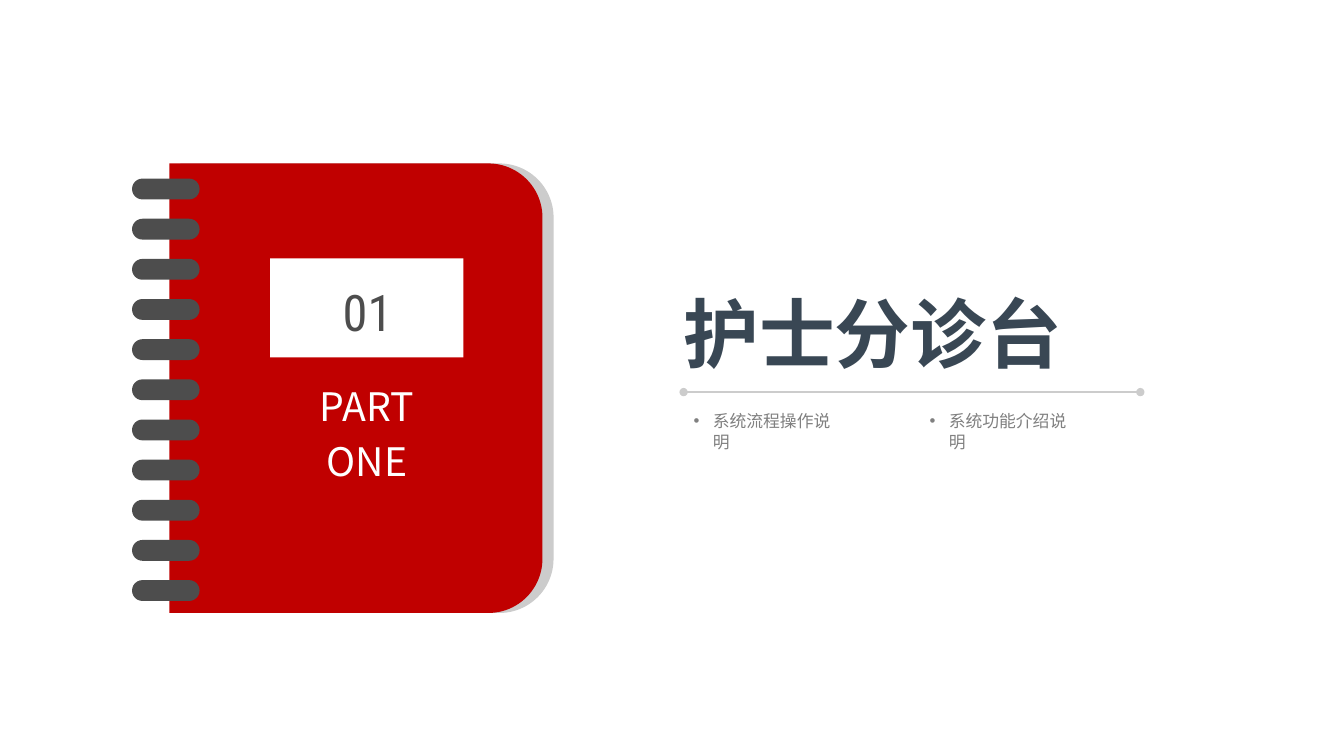
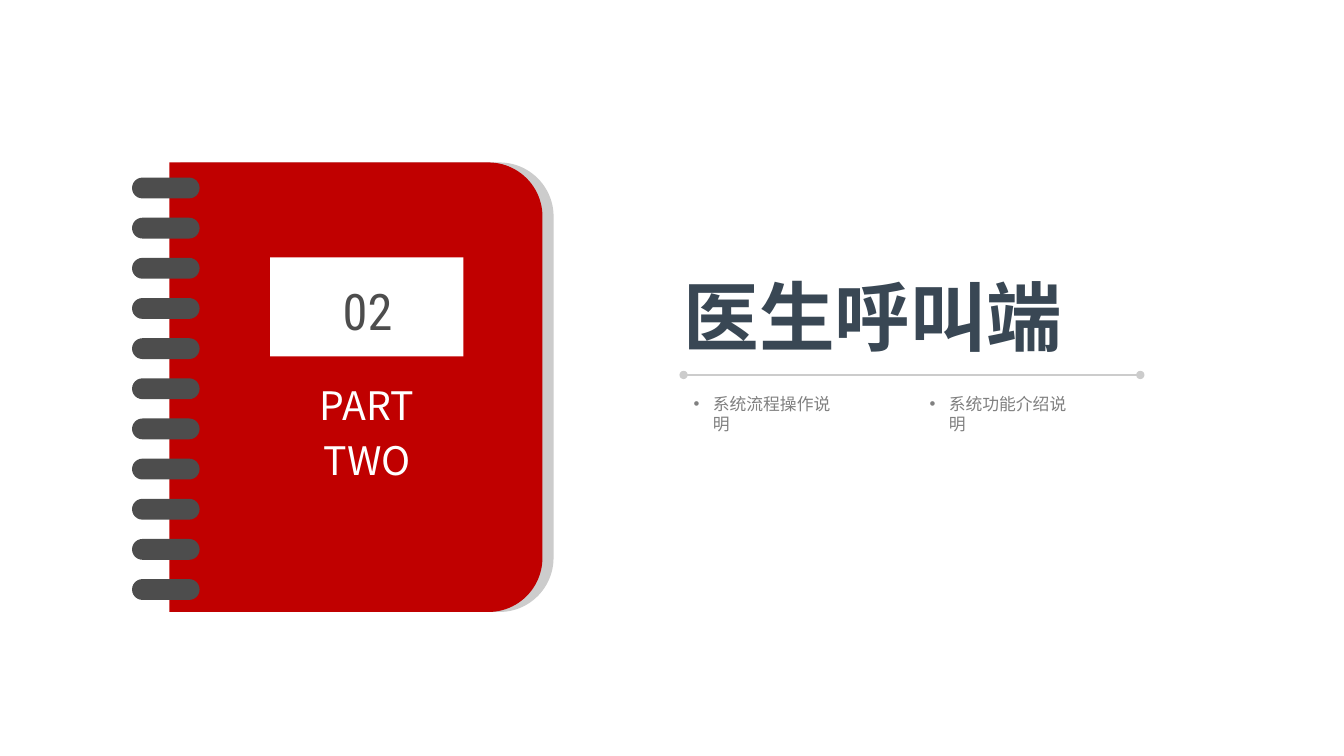
from dataclasses import dataclass

from lxml import etree
from pptx import Presentation
from pptx import util as u
from pptx.dml.color import RGBColor
from pptx.enum import shapes, text
from pptx.oxml import ns

# Shared style
RED, GREY, DARK, WHITE = "C00000", "CCCCCC", "4D4D4D", "FFFFFF"
NAVY, MUTED = "394754", "808080"
CJK_FONT, NUMBER_FONT = "Noto Sans CJK SC", "Roboto Condensed"

# Grid: 160 columns by 90 rows of square cells
SLIDE_WIDTH, SLIDE_HEIGHT = u.Inches(13.33), u.Inches(7.5)
CELL = SLIDE_HEIGHT / 90
TWO_CONTENT_LAYOUT = 3


@dataclass(frozen=True)
class Area:
    col: float
    row: float
    cols: float
    rows: float

    def down(self, rows: float) -> "Area":
        return Area(self.col, self.row + rows, self.cols, self.rows)

    def box(self) -> tuple:
        return tuple(cells(n) for n in (self.col, self.row, self.cols, self.rows))


@dataclass(frozen=True)
class Style:
    size: float
    color: str
    font: str = CJK_FONT
    bold: bool = False
    align: text.PP_ALIGN = text.PP_ALIGN.LEFT


@dataclass(frozen=True)
class Section:
    number: str
    ordinal: str
    heading: str
    topics: tuple
    notebook_row: float
    rule_row: float


# Notebook parts, measured from the notebook's top edge
COVER = Area(20.16, 0, 44.4, 53.52)
COVER_SHADOW = Area(21.48, 0, 44.4, 53.52)
LABEL = Area(32.16, 11.3, 23, 11.8)
NUMBER = Area(32.88, 14, 21.72, 7.3)
ORDINAL = Area(34.56, 26.1, 18.24, 12.5)
RING = Area(15.72, 1.8, 8.04, 2.48)
RING_COUNT, RING_PITCH = 11, 4.78
COVER_CORNER = 0.145

# Heading parts, measured from the rule
RULE_START, RULE_END = 81.36, 135.72
HEADING = Area(RULE_START, -12.5, 58.7, 10.9)
TOPIC = Area(RULE_START, 1.66, 20.64, 3.6)
TOPIC_PITCH = 28.08

NUMBER_STYLE = Style(36, DARK, NUMBER_FONT, align=text.PP_ALIGN.CENTER)
ORDINAL_STYLE = Style(28, WHITE, align=text.PP_ALIGN.CENTER)
HEADING_STYLE = Style(54, NAVY, bold=True)
TOPIC_STYLE = Style(12, MUTED)

TOPICS = ("系统流程操作说明", "系统功能介绍说明")
SECTIONS = (
    Section("01", "PART\nONE", "护士分诊台", TOPICS, 19.46, 46.68),
    Section("02", "PART\nTWO", "医生呼叫端", TOPICS, 19.34, 44.64),
)


def cells(count: float) -> int:
    return round(count * CELL)


def rgb(color: str) -> RGBColor:
    return RGBColor.from_string(color)


def place(shape, area: Area) -> None:
    shape.left, shape.top, shape.width, shape.height = area.box()


def add_block(slide, kind, area: Area, color: str):
    block = slide.shapes.add_shape(kind, *area.box())
    block.shadow.inherit = False
    block.fill.solid()
    block.fill.fore_color.rgb = rgb(color)
    block.line.fill.background()
    return block


def add_cover(slide, area: Area, color: str) -> None:
    """Draw a sheet whose two right corners are round."""
    middle_col, middle_row = area.col + area.cols / 2, area.row + area.rows / 2
    upright = Area(middle_col - area.rows / 2, middle_row - area.cols / 2, area.rows, area.cols)
    cover = add_block(slide, shapes.MSO_SHAPE.ROUND_2_SAME_RECTANGLE, upright, color)
    cover.adjustments[0] = COVER_CORNER
    cover.rotation = 90


def write(shape, words: str, style: Style, inset: bool = False, wrap: bool = True) -> None:
    frame = shape.text_frame
    frame.text = words
    frame.word_wrap = wrap
    frame.auto_size = text.MSO_AUTO_SIZE.SHAPE_TO_FIT_TEXT
    frame.vertical_anchor = text.MSO_ANCHOR.TOP
    if not inset:
        frame.margin_left = frame.margin_right = frame.margin_top = frame.margin_bottom = 0
    for index, paragraph in enumerate(frame.paragraphs):
        paragraph.alignment = style.align
        paragraph.space_before = u.Pt(0.2 * style.size if index else 0)
        for run in paragraph.runs:
            run.font.size, run.font.bold = u.Pt(style.size), style.bold
            run.font.name = style.font
            run.font.color.rgb = rgb(style.color)
            east_asian = etree.SubElement(run.font._element, ns.qn("a:ea"))
            east_asian.set("typeface", style.font)


def add_bullet(paragraph) -> None:
    properties = paragraph._p.get_or_add_pPr()
    indent = u.Inches(0.19)
    properties.set("marL", str(indent))
    properties.set("indent", str(-indent))
    for tag, key, value in (("a:buFont", "typeface", "Arial"), ("a:buChar", "char", "•")):
        etree.SubElement(properties, ns.qn(tag)).set(key, value)


def add_rule(slide, row: float) -> None:
    rule = slide.shapes.add_connector(
        shapes.MSO_CONNECTOR.STRAIGHT,
        cells(RULE_START), cells(row), cells(RULE_END), cells(row))
    rule.line.color.rgb = rgb(GREY)
    rule.line.width = u.Pt(1)
    for end in ("a:headEnd", "a:tailEnd"):
        etree.SubElement(rule.line._get_or_add_ln(), ns.qn(end)).set("type", "oval")
    etree.SubElement(rule._element.spPr, ns.qn("a:effectLst"))


def add_notebook(slide, section: Section) -> None:
    top = section.notebook_row
    add_cover(slide, COVER_SHADOW.down(top), GREY)
    add_cover(slide, COVER.down(top), RED)
    add_block(slide, shapes.MSO_SHAPE.RECTANGLE, LABEL.down(top), WHITE)
    for index in range(RING_COUNT):
        ring_area = RING.down(top + index * RING_PITCH)
        ring = add_block(slide, shapes.MSO_SHAPE.ROUNDED_RECTANGLE, ring_area, DARK)
        ring.adjustments[0] = 0.5
    for area, words, style in ((NUMBER, section.number, NUMBER_STYLE),
                               (ORDINAL, section.ordinal, ORDINAL_STYLE)):
        caption = slide.shapes.add_textbox(*area.down(top).box())
        write(caption, words, style)


def add_heading(slide, section: Section) -> None:
    heading, *topics = slide.placeholders
    place(heading, HEADING.down(section.rule_row))
    write(heading, section.heading, HEADING_STYLE)
    add_rule(slide, section.rule_row)
    for index, (topic, words) in enumerate(zip(topics, section.topics)):
        area = Area(TOPIC.col + index * TOPIC_PITCH, TOPIC.row, TOPIC.cols, TOPIC.rows)
        place(topic, area.down(section.rule_row))
        write(topic, words, TOPIC_STYLE, inset=True, wrap=False)
        add_bullet(topic.text_frame.paragraphs[0])


def main() -> None:
    deck = Presentation()
    deck.slide_width, deck.slide_height = SLIDE_WIDTH, SLIDE_HEIGHT
    for section in SECTIONS:
        slide = deck.slides.add_slide(deck.slide_layouts[TWO_CONTENT_LAYOUT])
        add_notebook(slide, section)
        add_heading(slide, section)
    deck.save("out.pptx")


if __name__ == "__main__":
    main()
